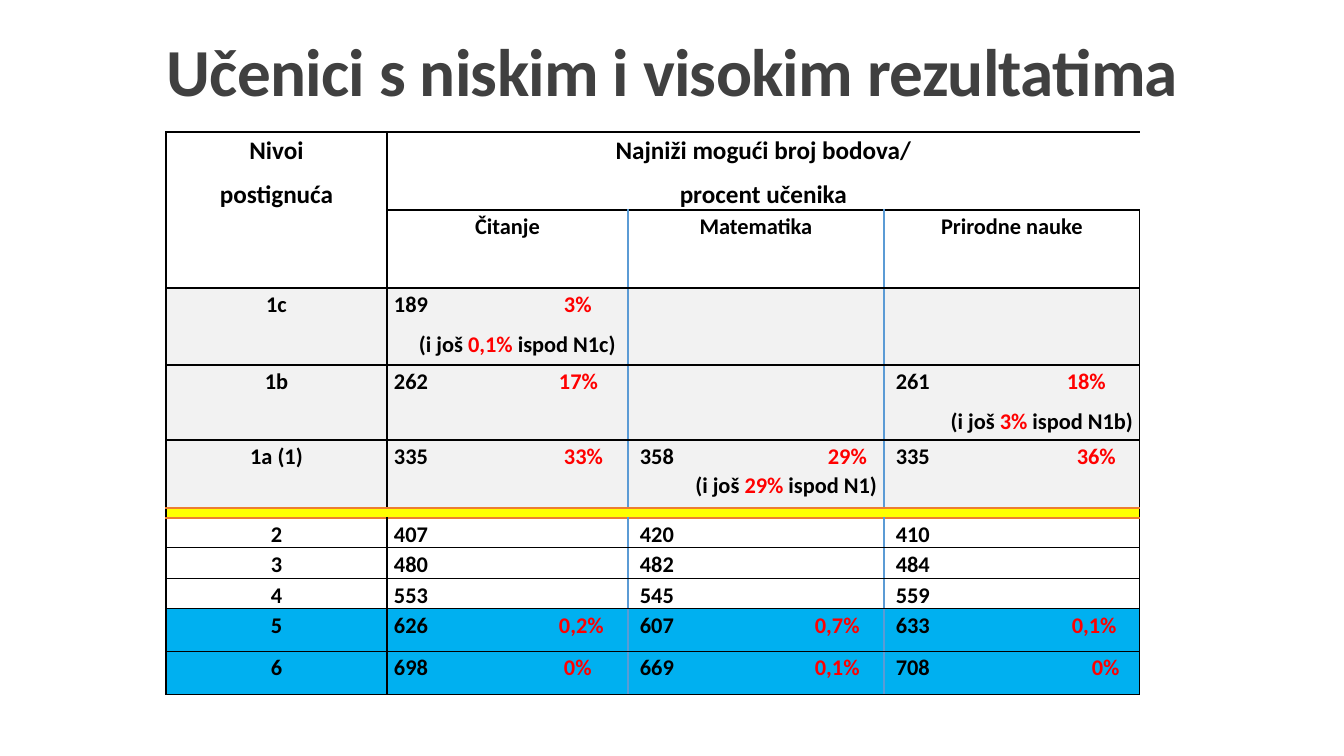
from lxml.etree import SubElement
from pptx import Presentation
from pptx.dml.color import RGBColor
from pptx.enum.text import MSO_ANCHOR, PP_ALIGN
from pptx.oxml.ns import qn
from pptx.util import Emu, Pt

SCALE = 914400 / 100.8
COLORS = {"title": "404040", "text": "000000", "percent": "FF0000",
          "low": "F2F2F2", "divider": "FFFF00", "high": "00B0F0",
          "line": "000000", "column": "5B9BD5", "accent": "ED7D31"}
FONT = "Calibri"
COLUMNS = [221, 241, 256, 256]
HEADER_ROWS = 2
DIVIDER = 5
INSET = 7

# Each row: height, fill, cells; each cell: paragraphs and tab stops.
# Text between asterisks is shown as a percentage.
EMPTY = ([], ())
ROWS = [
    (78, None, [(["Nivoi", "postignuća"], ()),
                (["Najniži mogući broj bodova/", "procent učenika"], ()), EMPTY, EMPTY]),
    (78, None, [EMPTY, (["Čitanje"], ()), (["Matematika"], ()), (["Prirodne nauke"], ())]),
    (77, "low", [(["1c"], ()),
                 (["189\t*3%*", "\t(i još *0,1%* ispod N1c)"], (25, 170)), EMPTY, EMPTY]),
    (75, "low", [(["1b"], ()), (["262\t*17%*"], (165,)), EMPTY,
                 (["261\t*18%*", "(i još *3%* ispod N1b)"], (171,))]),
    (68, "low", [(["1a (1)"], ()), (["335\t*33%*"], (170,)),
                 (["358\t*29%*", "(i još *29%* ispod N1)"], (188,)),
                 (["335\t*36%*"], (181,))]),
    (10, "divider", [EMPTY] * 4),
    (30, None, [(["2"], ()), (["407"], ()), (["420"], ()), (["410"], ())]),
    (31, None, [(["3"], ()), (["480"], ()), (["482"], ()), (["484"], ())]),
    (30, None, [(["4"], ()), (["553"], ()), (["545"], ()), (["559"], ())]),
    (43, "high", [(["5"], ()), (["626\t*0,2%*"], (165,)),
                  (["607\t*0,7%*"], (175,)), (["633\t*0,1%*"], (176,))]),
    (43, "high", [(["6"], ()), (["698\t*0%*"], (170,)),
                  (["669\t*0,1%*"], (175,)), (["708\t*0%*"], (196,))]),
]


def px(n):
    return Emu(round(n * SCALE))


def rgb(name):
    return RGBColor.from_string(COLORS[name])


def set_font(font, size, color):
    font.name, font.size, font.bold = FONT, Pt(size), True
    font.color.rgb = rgb(color)


def add_title(s, x, y, w, h):
    tf = s.shapes.add_textbox(px(x), px(y), px(w), px(h)).text_frame
    tf.word_wrap = True
    tf.vertical_anchor = MSO_ANCHOR.MIDDLE
    p = tf.paragraphs[0]
    p.alignment = PP_ALIGN.CENTER
    p.line_spacing = 0.9
    set_font(p.font, 48, "title")
    r = p.add_run()
    r.text = "Učenici s niskim i visokim rezultatima"
    r._r.get_or_add_rPr().set("spc", "-50")


def horizontal_line(edge, col):
    """Line style at a row edge, counted from the top of the table."""
    if edge == 1 and col == 0:
        return None
    return ("accent", 1.5) if edge in (DIVIDER, DIVIDER + 1) else ("line", 1)


def vertical_line(row, edge):
    """Line style at a column edge, counted from the left of the table."""
    if edge in (0, len(COLUMNS)):
        return "line", 1
    if row == DIVIDER or (row == 0 and edge > 1):
        return None
    return ("line", 1) if edge == 1 else ("column", 1.5)


def set_borders(cell, row, col):
    tc_pr = cell._tc.get_or_add_tcPr()
    sides = {"L": vertical_line(row, col), "R": vertical_line(row, col + 1),
             "T": horizontal_line(row, col), "B": horizontal_line(row + 1, col)}
    for side, style in sides.items():
        ln = SubElement(tc_pr, qn(f"a:ln{side}"))
        if style is None:
            SubElement(ln, qn("a:noFill"))
            continue
        color, width = style
        ln.set("w", str(Pt(width)))
        SubElement(SubElement(ln, qn("a:solidFill")), qn("a:srgbClr"), val=COLORS[color])


def write_paragraph(p, text, tabs, size, align, after):
    p.alignment = align
    p.line_spacing = 1.07
    p.space_after = Pt(after)
    if tabs:
        tab_list = SubElement(p._p.get_or_add_pPr(), qn("a:tabLst"))
        for tab in tabs:
            SubElement(tab_list, qn("a:tab"), pos=str(px(tab)), algn="l")
    set_font(p.font, size, "text")
    for i, part in enumerate(text.split("*")):
        if part:
            r = p.add_run()
            r.text = part
            if i % 2:
                r.font.color.rgb = rgb("percent")


def fill_cell(cell, row, col, fill, paragraphs, tabs):
    set_borders(cell, row, col)
    if fill:
        cell.fill.solid()
        cell.fill.fore_color.rgb = rgb(fill)
    else:
        cell.fill.background()
    centered = row < HEADER_ROWS or col == 0
    cell.margin_left = px(INSET if centered or col == 1 else INSET + 5)
    cell.margin_right = px(INSET)
    cell.margin_top, cell.margin_bottom = px(1 if paragraphs else 0), 0
    tf = cell.text_frame
    if not paragraphs:
        SubElement(tf.paragraphs[0]._p, qn("a:endParaRPr"), sz="200")
    for i, text in enumerate(paragraphs):
        p = tf.add_paragraph() if i else tf.paragraphs[0]
        align = PP_ALIGN.CENTER if centered else PP_ALIGN.LEFT
        if text.startswith("("):
            align = PP_ALIGN.RIGHT
        after = 0 if row == DIVIDER - 1 else 8
        write_paragraph(p, text, tabs, 18 if row == 0 else 16, align, after)


def add_levels_table(s, x, y):
    heights = [height for height, _, _ in ROWS]
    table = s.shapes.add_table(len(ROWS), len(COLUMNS), px(x), px(y),
                               px(sum(COLUMNS)), px(sum(heights))).table
    table.first_row = table.horz_banding = False
    for column, width in zip(table.columns, COLUMNS):
        column.width = px(width)
    for i, (height, fill, cells) in enumerate(ROWS):
        table.rows[i].height = px(height)
        for j, (paragraphs, tabs) in enumerate(cells):
            fill_cell(table.cell(i, j), i, j, fill, paragraphs, tabs)
    table.cell(0, 0).merge(table.cell(1, 0))
    table.cell(0, 1).merge(table.cell(0, 3))


def main():
    prs = Presentation()
    prs.slide_width, prs.slide_height = px(1344), px(756)
    s = prs.slides.add_slide(prs.slide_layouts[6])
    add_title(s, 93, 40, 1159, 70)
    add_levels_table(s, 166, 132)
    prs.save("out.pptx")


if __name__ == "__main__":
    main()
